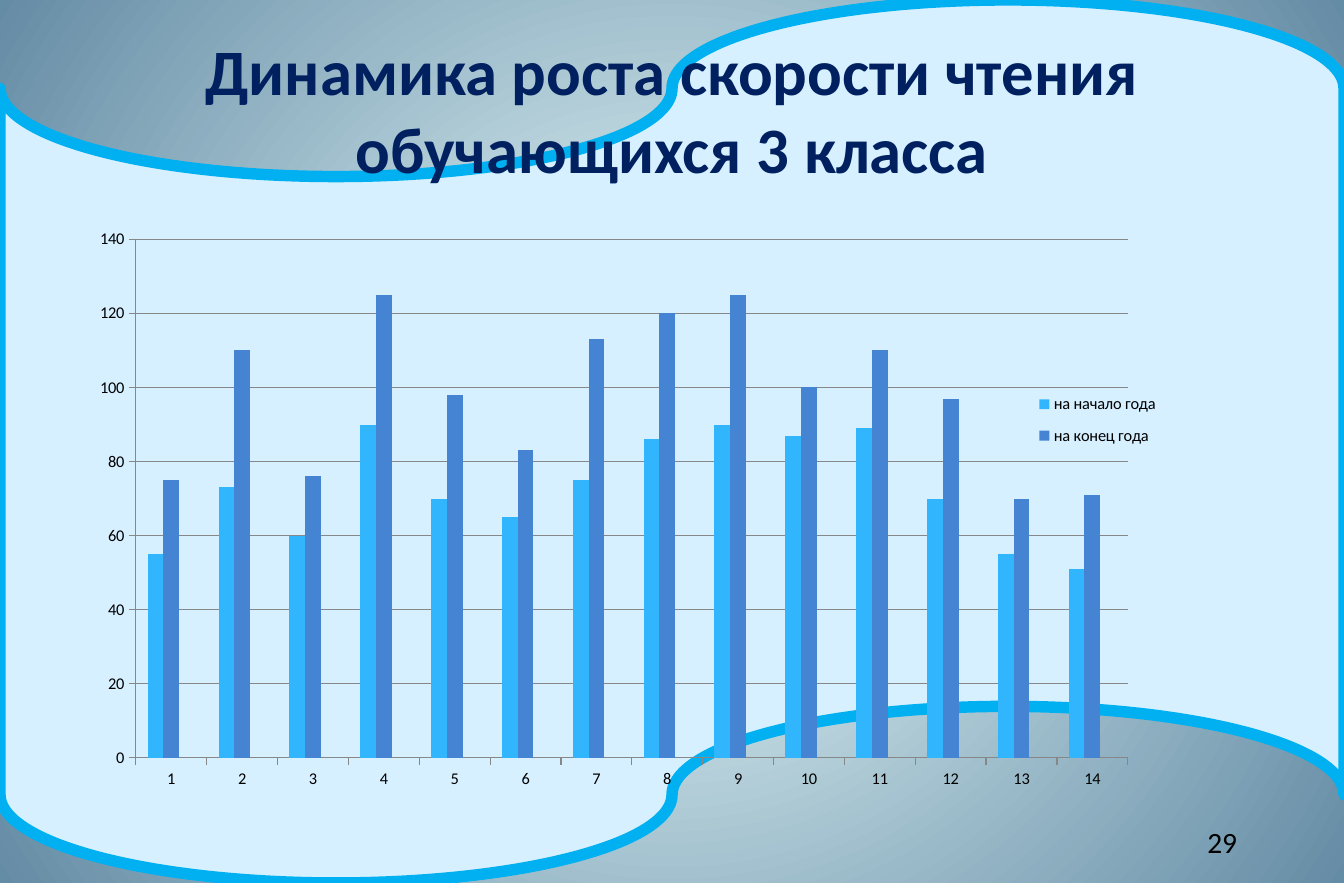
from pptx import Presentation
from pptx.chart.data import CategoryChartData
from pptx.dml.color import RGBColor
from pptx.enum.chart import XL_CHART_TYPE, XL_LEGEND_POSITION, XL_TICK_MARK
from pptx.enum.shapes import MSO_SHAPE
from pptx.enum.text import MSO_ANCHOR, MSO_AUTO_SIZE, PP_ALIGN
from pptx.oxml import parse_xml
from pptx.oxml.ns import nsdecls, qn
from pptx.util import Inches, Pt

TITLE = "Динамика роста скорости чтения обучающихся 3 класса"
PAGE = "29"
CATEGORIES = [str(n) for n in range(1, 15)]
FONT = "Calibri"

NAVY = RGBColor(0x00, 0x20, 0x60)
BLACK = RGBColor(0, 0, 0)
GREY = RGBColor(0x87, 0x87, 0x87)
PALE = RGBColor(0xD6, 0xF0, 0xFF)
CYAN = RGBColor(0x00, 0xB0, 0xF0)
GLOW = RGBColor(0xEC, 0xFF, 0xFE)
STEEL = RGBColor(0x65, 0x8C, 0xA5)
SKY = RGBColor(0x31, 0xB6, 0xFD)
BLUE = RGBColor(0x45, 0x84, 0xD3)
GREEN = RGBColor(0x5B, 0xD0, 0x78)

SERIES = [
    ("на начало года", [55, 73, 60, 90, 70, 65, 75, 86, 90, 87, 89, 70, 55, 51], SKY),
    ("на конец года", [75, 110, 76, 125, 98, 83, 113, 120, 125, 100, 110, 97, 70, 71], BLUE),
    ("Series 3", [None] * len(CATEGORIES), GREEN),
]
EMPTY_SERIES = 2

CLUSTERED = XL_CHART_TYPE.COLUMN_CLUSTERED
RIGHT = XL_LEGEND_POSITION.RIGHT
OUTSIDE = XL_TICK_MARK.OUTSIDE
TAPE = MSO_SHAPE.FLOWCHART_PUNCHED_TAPE
MIDDLE, TOP = MSO_ANCHOR.MIDDLE, MSO_ANCHOR.TOP
CENTER, LEFT = PP_ALIGN.CENTER, PP_ALIGN.LEFT
NO_FIT = MSO_AUTO_SIZE.NONE


def write(sp, text, size, color=BLACK, bold=False, align=LEFT, anchor=TOP):
    tf = sp.text_frame
    tf.word_wrap = True
    tf.auto_size = NO_FIT
    tf.vertical_anchor = anchor
    p = tf.paragraphs[0]
    p.alignment = align
    r = p.add_run()
    r.text = text
    r.font.name, r.font.size, r.font.bold = FONT, Pt(size), bold
    r.font.color.rgb = color


def place(parent, index, x, y, w, h, target=""):
    for old in parent.findall(qn("c:layout")):
        parent.remove(old)
    parent.insert(index, parse_xml(
        f'<c:layout {nsdecls("c")}><c:manualLayout>{target}'
        '<c:xMode val="edge"/><c:yMode val="edge"/>'
        f'<c:x val="{x}"/><c:y val="{y}"/><c:w val="{w}"/><c:h val="{h}"/>'
        '</c:manualLayout></c:layout>'))


def add_background(s, prs):
    fill = s.background.fill
    fill.gradient()
    for stop, color in zip(fill.gradient_stops, (GLOW, STEEL)):
        stop.color.rgb = color
    grad = s.element.find(".//" + qn("a:gradFill"))
    grad.replace(grad.find(qn("a:lin")), parse_xml(
        f'<a:path {nsdecls("a")} path="circle">'
        '<a:fillToRect l="50000" t="50000" r="50000" b="50000"/></a:path>'))
    tape = s.shapes.add_shape(TAPE, 0, 0, prs.slide_width, prs.slide_height)
    tape.shadow.inherit = False
    tape.fill.solid()
    tape.fill.fore_color.rgb = PALE
    tape.line.color.rgb = CYAN
    tape.line.width = Pt(7)
    s.shapes.element.insert(2, tape.element)


def add_reading_chart(s):
    data = CategoryChartData()
    data.categories = CATEGORIES
    for name, values, color in SERIES:
        data.add_series(name, values)
    chart = s.shapes.add_chart(CLUSTERED, Inches(0.64), Inches(1.86),
                               Inches(10.28), Inches(4.95), data).chart
    chart.has_title = False
    chart.font.name, chart.font.size = FONT, Pt(10)
    chart.font.color.rgb = BLACK

    plot = chart.plots[0]
    plot.gap_width, plot.overlap = 150, 0
    plot.vary_by_categories = False
    for series, (name, values, color) in zip(plot.series, SERIES):
        series.format.fill.solid()
        series.format.fill.fore_color.rgb = color

    for axis in (chart.category_axis, chart.value_axis):
        axis.major_tick_mark = OUTSIDE
        axis.format.line.color.rgb = GREY
    axis = chart.value_axis
    axis.minimum_scale, axis.maximum_scale, axis.major_unit = 0, 140, 20
    axis.major_gridlines.format.line.color.rgb = GREY

    chart.has_legend = True
    chart.legend.position = RIGHT
    chart.legend.include_in_layout = False
    chart.legend.font.name, chart.legend.font.size = FONT, Pt(10)
    chart.legend.font.color.rgb = BLACK

    root = plot.series[0].format.fill and chart.element if hasattr(chart, "element") else chart._chartSpace
    legend = root.find(".//" + qn("c:legend"))
    place(legend, 1, 0.78, 0.28, 0.13, 0.13)
    legend.insert(1, parse_xml(
        f'<c:legendEntry {nsdecls("c")}><c:idx val="{EMPTY_SERIES}"/>'
        '<c:delete val="1"/></c:legendEntry>'))
    place(root.find(".//" + qn("c:plotArea")), 0, 0.05, 0.035, 0.82, 0.89,
          '<c:layoutTarget val="inner"/>')


def main():
    prs = Presentation()
    prs.slide_width, prs.slide_height = Inches(11.42), Inches(7.5)
    s = prs.slides.add_slide(prs.slide_layouts[5])
    add_background(s, prs)

    title = s.shapes.title
    title.left, title.top = Inches(0.57), Inches(0.3)
    title.width, title.height = Inches(10.28), Inches(1.25)
    write(title, TITLE, 39.6, color=NAVY, bold=True, align=CENTER, anchor=MIDDLE)

    add_reading_chart(s)
    number = s.shapes.add_textbox(Inches(10.16), Inches(6.95), Inches(0.55), Inches(0.4))
    write(number, PAGE, 18)
    prs.save("out.pptx")


if __name__ == "__main__":
    main()
